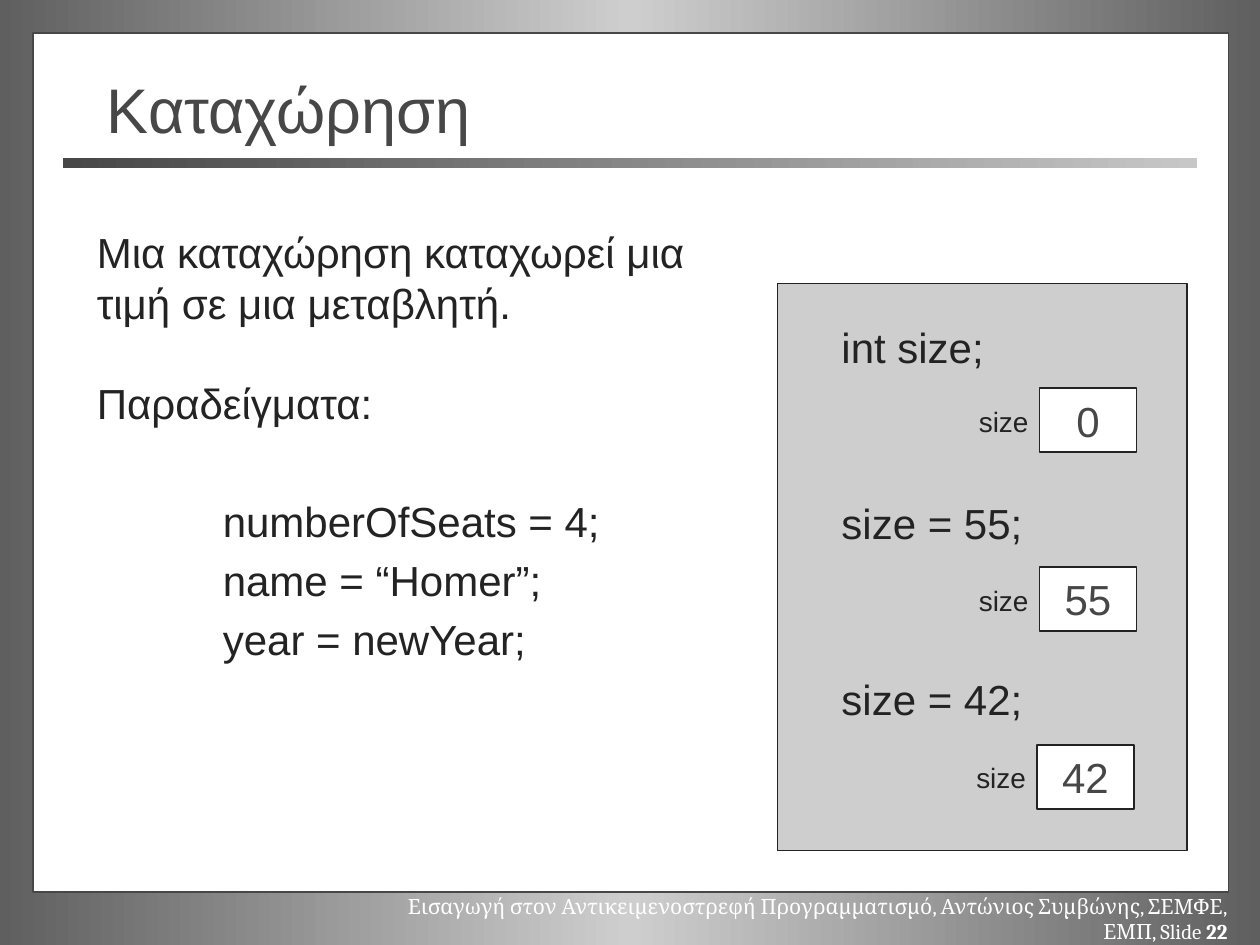
"""Build a slide on assigning values to variables."""
import copy

from pptx import Presentation
from pptx.dml.color import RGBColor
from pptx.enum import shapes, text
from pptx.util import Inches, Pt

WHITE = RGBColor(0xFF, 0xFF, 0xFF)
INK = RGBColor(0x23, 0x23, 0x23)
DARK = RGBColor(0x47, 0x47, 0x47)
EDGE = RGBColor(0x5F, 0x5F, 0x5F)
PANEL = RGBColor(0xCE, 0xCE, 0xCE)
PALE = RGBColor(0xC7, 0xC7, 0xC7)


def set_gradient(fill, colors):
    """Fill from left to right with evenly spaced colours."""
    fill.gradient()
    fill.gradient_angle = 0
    first = fill.gradient_stops[0]._gs
    for _ in colors[2:]:
        first.addnext(copy.deepcopy(first))
    for i, (stop, color) in enumerate(zip(fill.gradient_stops, colors)):
        stop.color.rgb = color
        stop.position = i / (len(colors) - 1)


def add_rect(s, box, color=None, line=None):
    """Add a flat rectangle."""
    sp = s.shapes.add_shape(shapes.MSO_SHAPE.RECTANGLE, *map(Inches, box))
    sp.shadow.inherit = False
    if color is not None:
        sp.fill.solid()
        sp.fill.fore_color.rgb = color
    if line is None:
        sp.line.fill.background()
    else:
        sp.line.color.rgb = line
        sp.line.width = Pt(1)
    return sp


def style(p, size, color, name="Arial", before=0, spacing=None):
    """Set the font and spacing of a paragraph."""
    p.font.size, p.font.name = Pt(size), name
    p.font.color.rgb = color
    p.space_before = Pt(before)
    if spacing:
        p.line_spacing = Pt(spacing)


def add_text(s, box, lines, size=24, color=INK, name="Arial", spacing=None):
    """Add a text box from (text, space before, indent) lines."""
    tf = s.shapes.add_textbox(*map(Inches, box)).text_frame
    tf.word_wrap = True
    for i, (line, before, indent) in enumerate(lines):
        p = tf.add_paragraph() if i else tf.paragraphs[0]
        p.text = line
        style(p, size, color, name, before, spacing)
        if indent:
            pPr = p._p.get_or_add_pPr()
            pPr.set("marL", str(Inches(indent)))
            pPr.set("indent", "0")
    return tf


def add_variable(s, left, top, value):
    """Add a value box with its variable name on the left."""
    sp = add_rect(s, (left, top, 0.77, 0.51), WHITE, INK)
    tf = sp.text_frame
    tf.word_wrap = False
    tf.vertical_anchor = text.MSO_ANCHOR.MIDDLE
    p = tf.paragraphs[0]
    p.text = value
    p.alignment = text.PP_ALIGN.CENTER
    style(p, 24, DARK, spacing=28.8)
    label = add_text(s, (left - 0.58, top + 0.08, 0.59, 0.36), [("size", 0, 0)],
                     size=16, spacing=19.2)
    label.margin_right = 0


def add_frame(s):
    """Add the background, page, footer and title rule."""
    set_gradient(s.background.fill, [EDGE, PANEL, EDGE])
    add_rect(s, (0.26, 0.26, 9.49, 6.82), WHITE, DARK)
    footer = "Εισαγωγή στον Αντικειμενοστρεφή Προγραμματισμό, Αντώνιος Συμβώνης, ΣΕΜΦΕ, ΕΜΠ, Slide "
    tf = add_text(s, (2.84, 7.04, 7, 0.3), [(footer, 0, 0)], 12, WHITE, "Cambria")
    p = tf.paragraphs[0]
    p.alignment = text.PP_ALIGN.RIGHT
    r = p.add_run()
    r.text = "22"
    r.font.bold = True
    set_gradient(add_rect(s, (0.5, 1.25, 9, 0.08)).fill, [DARK, PALE])


def main():
    """Build and save the slide."""
    prs = Presentation()
    prs.slide_width, prs.slide_height = Inches(10), Inches(7.5)
    s = prs.slides.add_slide(prs.slide_layouts[6])
    add_frame(s)
    add_rect(s, (6.17, 2.25, 3.25, 4.5), PANEL, INK)
    title = add_text(s, (0.75, 0.55, 8.5, 0.62), [("Καταχώρηση", 0, 0)], 36, DARK)
    title.vertical_anchor = text.MSO_ANCHOR.MIDDLE
    add_text(s, (0.67, 1.75, 5.17, 3.61), [
        ("Μια καταχώρηση καταχωρεί μια τιμή σε μια μεταβλητή.", 0, 0),
        ("Παραδείγματα:", 28.8, 0),
        ("numberOfSeats = 4;", 38.4, 1),
        ("name = “Homer”;", 4.8, 1),
        ("year = newYear;", 4.8, 1),
    ], spacing=28.8)
    code = add_text(s, (6.58, 2.5, 1.63, 3.37), [
        ("int size;", 0, 0), ("size = 55;", 72, 0), ("size = 42;", 72, 0),
    ], spacing=28.8)
    code.margin_right = 0
    for left, top, value in [(8.25, 3.08, "0"), (8.25, 4.5, "55"), (8.23, 5.91, "42")]:
        add_variable(s, left, top, value)
    prs.save("out.pptx")


if __name__ == "__main__":
    main()
